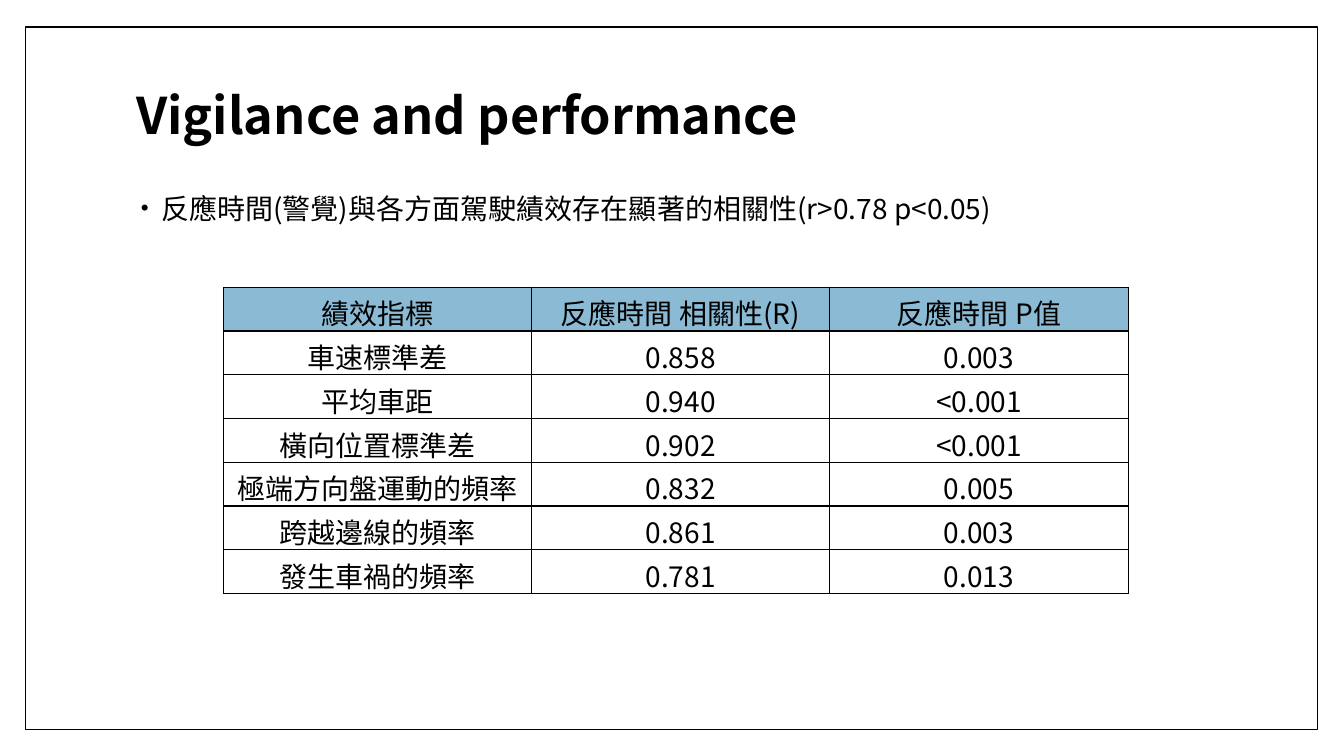
from lxml import etree
from pptx import Presentation, util as u
from pptx.dml.color import RGBColor
from pptx.enum import shapes, text
from pptx.oxml import ns

FONT = "Noto Sans CJK SC"
BLACK, WHITE, BLUE = "000000", "FFFFFF", "8ABAD4"
TITLE = "Vigilance and performance"
FINDING = "反應時間(警覺)與各方面駕駛績效存在顯著的相關性(r>0.78 p<0.05)"
ROWS = [
    ("績效指標", "反應時間 相關性(R)", "反應時間 P值"),
    ("車速標準差", "0.858", "0.003"),
    ("平均車距", "0.940", "<0.001"),
    ("橫向位置標準差", "0.902", "<0.001"),
    ("極端方向盤運動的頻率", "0.832", "0.005"),
    ("跨越邊線的頻率", "0.861", "0.003"),
    ("發生車禍的頻率", "0.781", "0.013"),
]
COLUMN_WIDTHS = (3.05, 2.96, 2.96)


def color(value):
    """Turn a hex string into a colour."""
    return RGBColor.from_string(value)


def add_xml(parent, tag, **attributes):
    """Append a drawing element to its parent."""
    return etree.SubElement(parent, ns.qn(f"a:{tag}"), attributes)


def style(paragraph, size, bold=False):
    """Set the font of a whole paragraph."""
    font = paragraph.font
    font.name, font.size, font.bold = FONT, u.Pt(size), bold
    font.color.rgb = color(BLACK)
    add_xml(font._element, "ea", typeface=FONT)


def place(shape, box):
    """Move a shape into a box given in inches."""
    shape.left, shape.top, shape.width, shape.height = map(u.Inches, box)


def add_frame(slide, box):
    """Draw the outlined page frame behind the title."""
    frame = slide.shapes.add_shape(shapes.MSO_SHAPE.RECTANGLE, *map(u.Inches, box))
    frame.shadow.inherit = False
    frame.fill.solid()
    frame.fill.fore_color.rgb = color(WHITE)
    frame.line.color.rgb = color(BLACK)
    frame.line.width = u.Pt(1)
    slide.shapes.title.element.addprevious(frame.element)


def add_title(slide, box):
    """Fill and format the title placeholder."""
    title = slide.shapes.title
    place(title, box)
    title.text_frame.text = TITLE
    title.text_frame.vertical_anchor = text.MSO_ANCHOR.MIDDLE
    paragraph = title.text_frame.paragraphs[0]
    paragraph.alignment = text.PP_ALIGN.LEFT
    paragraph.line_spacing = 0.9
    style(paragraph, 36, bold=True)


def add_finding(slide, box):
    """Add the bulleted finding."""
    frame = slide.shapes.add_textbox(*map(u.Inches, box)).text_frame
    frame.word_wrap = True
    paragraph = frame.paragraphs[0]
    paragraph.text = FINDING
    paragraph.line_spacing = 1.5
    properties = paragraph._p.get_or_add_pPr()
    properties.set("marL", str(u.Inches(0.25)))
    properties.set("indent", str(u.Inches(-0.2)))
    bullet_color = add_xml(properties, "buClr")
    add_xml(bullet_color, "srgbClr", val=BLACK)
    add_xml(properties, "buSzPct", val="80000")
    add_xml(properties, "buFont", typeface="Arial")
    add_xml(properties, "buChar", char="•")
    style(paragraph, 20)


def format_cell(cell, value, fill):
    """Write a centred cell with a fill and thin black borders."""
    cell.text = value
    cell.vertical_anchor = text.MSO_ANCHOR.MIDDLE
    paragraph = cell.text_frame.paragraphs[0]
    paragraph.alignment = text.PP_ALIGN.CENTER
    style(paragraph, 20)
    properties = cell._tc.get_or_add_tcPr()
    for side in ("lnL", "lnR", "lnT", "lnB"):
        border = add_xml(properties, side, w=str(u.Pt(1)))
        add_xml(add_xml(border, "solidFill"), "srgbClr", val=BLACK)
    cell.fill.solid()
    cell.fill.fore_color.rgb = color(fill)


def add_results(slide, box):
    """Add the table of correlations."""
    table = slide.shapes.add_table(
        len(ROWS), len(COLUMN_WIDTHS), *map(u.Inches, box)).table
    for column, width in zip(table.columns, COLUMN_WIDTHS):
        column.width = u.Inches(width)
    for row, values in enumerate(ROWS):
        for column, value in enumerate(values):
            format_cell(table.cell(row, column), value, WHITE if row else BLUE)


def main():
    """Build and save the slide."""
    presentation = Presentation()
    presentation.slide_width = u.Inches(13.33)
    presentation.slide_height = u.Inches(7.5)
    slide = presentation.slides.add_slide(presentation.slide_layouts[5])
    add_frame(slide, (0.25, 0.27, 12.82, 6.97))
    add_title(slide, (1.25, 0.67, 10.8, 1.01))
    add_finding(slide, (1.25, 1.68, 10.8, 0.8))
    add_results(slide, (2.22, 2.85, sum(COLUMN_WIDTHS), 3.03))
    presentation.save("out.pptx")


if __name__ == "__main__":
    main()
